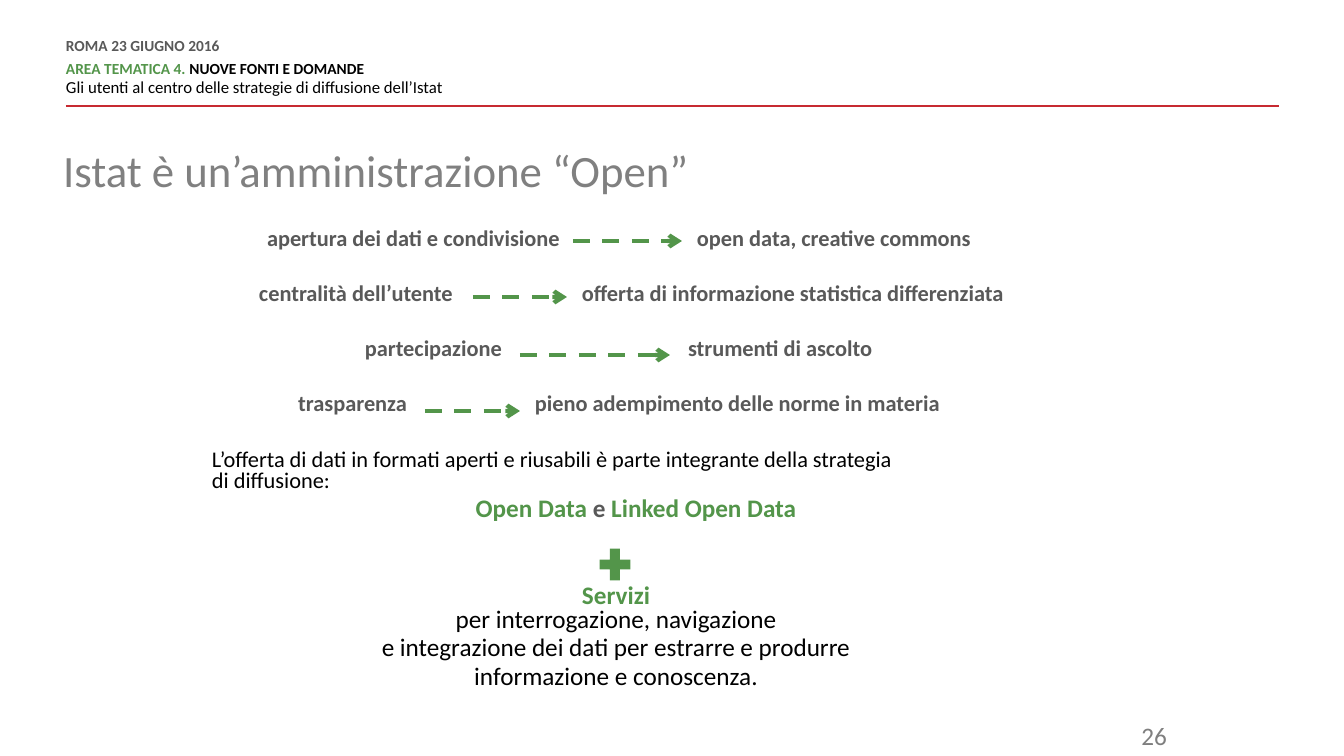
from lxml import etree
from pptx import Presentation
from pptx.dml.color import RGBColor
from pptx.enum.dml import MSO_LINE
from pptx.enum.shapes import MSO_CONNECTOR, MSO_SHAPE
from pptx.enum.text import MSO_ANCHOR, MSO_AUTO_SIZE, PP_ALIGN
from pptx.oxml.ns import qn
from pptx.util import Emu, Pt

STRAIGHT = MSO_CONNECTOR.STRAIGHT
PLUS = MSO_SHAPE.MATH_PLUS
DASH = MSO_LINE.DASH
TOP, MIDDLE = MSO_ANCHOR.TOP, MSO_ANCHOR.MIDDLE
LEFT, CENTER, RIGHT = PP_ALIGN.LEFT, PP_ALIGN.CENTER, PP_ALIGN.RIGHT
NO_AUTOFIT = MSO_AUTO_SIZE.NONE

EMU_PER_PX = 914400 / 100.8
FONT = "Calibri"
COLORS = {
    "green": "53954A",
    "red": "C72A31",
    "dark": "595959",
    "gray": "808080",
    "number": "7F7F7F",
    "black": "000000",
}

ROW_TOP, ROW_PITCH, ROW_HEIGHT = 224, 55, 28
LABEL_WIDTH = 440
# principle, its right edge, arrow start, arrow end, arrow height, practice, its left edge
PRINCIPLES = [
    ("apertura dei dati e condivisione", 560, 573, 682, 241,
     "open data, creative commons", 697),
    ("centralità dell’utente", 453, 473, 567, 297,
     "offerta di informazione statistica differenziata", 582),
    ("partecipazione", 502, 520, 670, 355,
     "strumenti di ascolto", 688),
    ("trasparenza", 407, 425, 520, 411,
     "pieno adempimento delle norme in materia", 535),
]


def px(value):
    return Emu(round(value * EMU_PER_PX))


def rgb(name):
    return RGBColor.from_string(COLORS[name])


def prepare_frame(shape, anchor=TOP):
    frame = shape.text_frame
    frame.word_wrap = True
    frame.auto_size = NO_AUTOFIT
    frame.vertical_anchor = anchor
    frame.margin_left = frame.margin_top = 0
    frame.margin_right = frame.margin_bottom = 0
    return frame


def add_run(para, text, size, color, bold=False):
    span = para.add_run()
    span.text = text
    span.font.name = FONT
    span.font.size = Pt(size)
    span.font.bold = bold
    span.font.color.rgb = rgb(color)


def format_para(para, align=LEFT, line=None, before=None, after=None):
    para.alignment = align
    para.line_spacing = line
    para.space_before = before
    para.space_after = after
    return para


def add_box(slide, left, top, width, height, anchor=TOP):
    box = slide.shapes.add_textbox(px(left), px(top), px(width), px(height))
    return prepare_frame(box, anchor)


def add_label(slide, text, left, top, align):
    frame = add_box(slide, left, top, LABEL_WIDTH, ROW_HEIGHT, MIDDLE)
    add_run(format_para(frame.paragraphs[0], align), text, 16, "dark", True)


def add_line(slide, start, end, y, color, width):
    line = slide.shapes.add_connector(STRAIGHT, px(start), px(y), px(end), px(y))
    line.line.color.rgb = rgb(color)
    line.line.width = Pt(width)
    etree.SubElement(line._element.spPr, qn("a:effectLst"))
    return line


def add_dashed_arrow(slide, start, end, y):
    arrow = add_line(slide, start, end, y, "green", 3)
    arrow.line.dash_style = DASH
    head = etree.SubElement(arrow.line._get_or_add_ln(), qn("a:tailEnd"))
    head.set("type", "arrow")


def add_header(slide):
    frame = add_box(slide, 66, 39, 841, 59)
    line = Pt(10.8)
    add_run(format_para(frame.paragraphs[0], line=line, after=Pt(6)),
            "ROMA 23 GIUGNO 2016", 11, "dark", True)
    area = format_para(frame.add_paragraph(), line=line)
    add_run(area, "AREA TEMATICA 4. ", 11, "green", True)
    add_run(area, "NUOVE FONTI E DOMANDE", 11, "black", True)
    add_run(format_para(frame.add_paragraph(), line=line, before=Pt(3)),
            "Gli utenti al centro delle strategie di diffusione dell’Istat", 12, "black")
    add_line(slide, 66, 1279, 106, "red", 2)


def add_title(slide):
    title = slide.shapes.title
    title.left, title.top = px(63), px(143)
    title.width, title.height = px(1179), px(79)
    para = format_para(prepare_frame(title).paragraphs[0])
    add_run(para, "Istat è un’amministrazione “Open”", 32, "gray")


def add_principles(slide):
    for index, row in enumerate(PRINCIPLES):
        principle, right_edge, start, end, arrow_y, practice, left_edge = row
        top = ROW_TOP + index * ROW_PITCH
        add_label(slide, principle, right_edge - LABEL_WIDTH, top, RIGHT)
        add_label(slide, practice, left_edge, top, LEFT)
        add_dashed_arrow(slide, start, end, arrow_y)


def add_offer(slide):
    para = format_para(add_box(slide, 212, 450, 760, 44).paragraphs[0], line=0.8)
    add_run(para, "L’offerta di dati in formati aperti e riusabili "
                  "è parte integrante della strategia", 16, "black")
    para.add_line_break()
    add_run(para, "di diffusione:", 16, "black")

    para = format_para(add_box(slide, 386, 498, 500, 28).paragraphs[0], CENTER, 0.8)
    add_run(para, "Open Data ", 18, "green", True)
    add_run(para, "e ", 18, "dark", True)
    add_run(para, "Linked Open Data", 18, "green", True)


def add_services(slide):
    plus = slide.shapes.add_shape(PLUS, px(594), px(543), px(42), px(43))
    plus.shadow.inherit = False
    plus.fill.solid()
    plus.fill.fore_color.rgb = rgb("green")
    plus.line.fill.background()

    frame = add_box(slide, 316, 585, 600, 112)
    para = format_para(frame.paragraphs[0], CENTER, 0.8)
    add_run(para, "Servizi", 18, "green", True)
    para.add_line_break()
    add_run(para, "per interrogazione, navigazione", 18, "black")
    for text in ("e integrazione dei dati per estrarre e produrre",
                 "informazione e conoscenza."):
        para = format_para(frame.add_paragraph(), CENTER, 0.8, Pt(3))
        add_run(para, text, 18, "black")


def add_page_number(slide):
    frame = add_box(slide, 1058, 720, 109, 31)
    add_run(format_para(frame.paragraphs[0], RIGHT), "26", 18, "number")


def main():
    deck = Presentation()
    deck.slide_width, deck.slide_height = px(1344), px(756)
    page = deck.slides.add_slide(deck.slide_layouts[5])
    add_header(page)
    add_title(page)
    add_principles(page)
    add_offer(page)
    add_services(page)
    add_page_number(page)
    deck.save("out.pptx")


if __name__ == "__main__":
    main()
